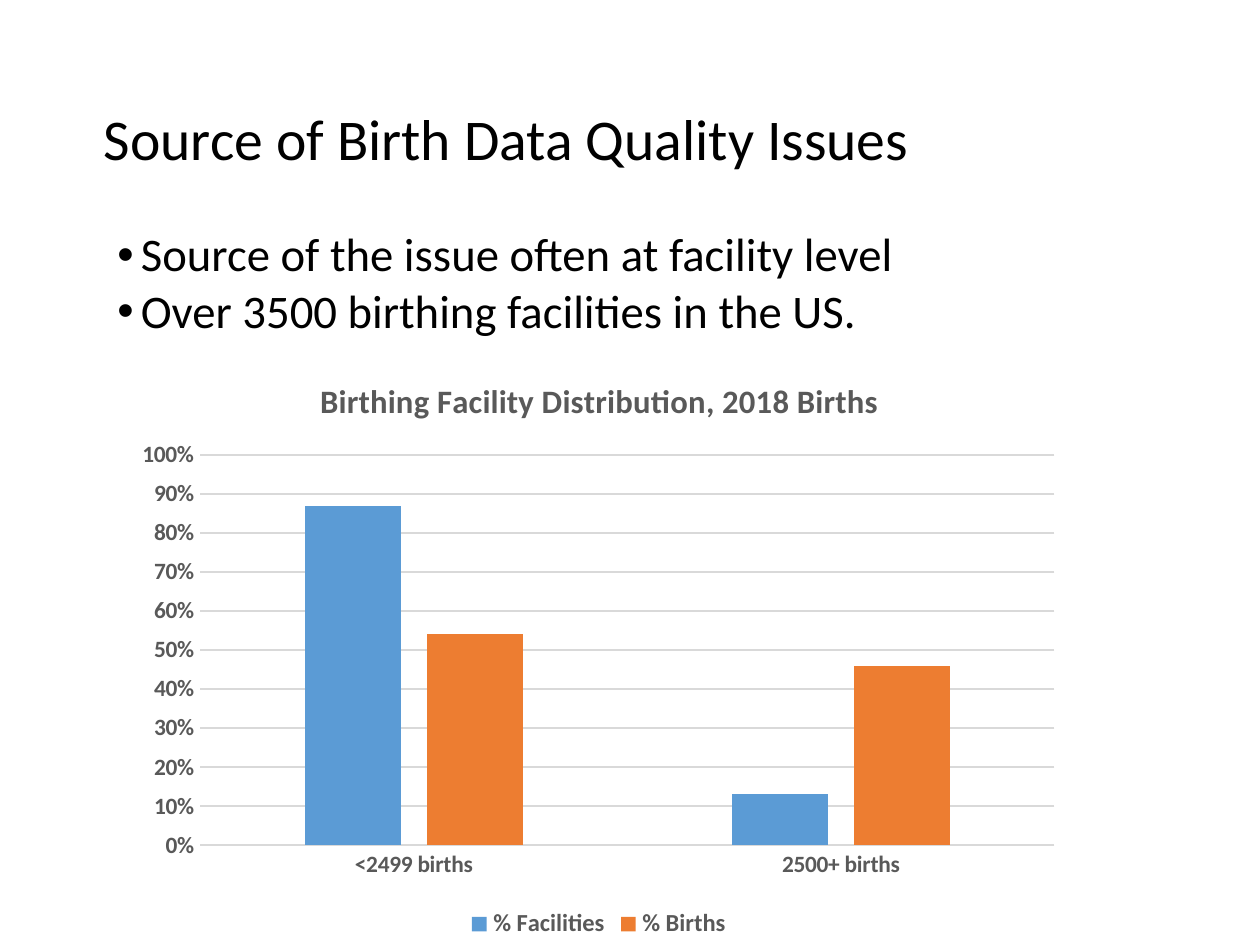
import pptx
import pptx.chart.data
import pptx.dml.color
import pptx.enum.chart
import pptx.enum.text
import pptx.oxml
import pptx.oxml.ns
import pptx.util
from pptx.util import Inches

FONT = "Calibri"
BLACK, GREY, GRID = "000000", "595959", "D9D9D9"
BLUE, ORANGE = "5B9BD5", "ED7D31"
SLIDE_WIDTH = 7.5
SLIDE_HEIGHT = SLIDE_WIDTH * 3 / 4


def color(value):
    return pptx.dml.color.RGBColor.from_string(value)


def apply_format(target, values):
    for name, value in values.items():
        setattr(target, name, value)


def set_layout(parent, index, **position):
    """Place a chart part by fractions of the chart's size."""
    for old in parent.findall(pptx.oxml.ns.qn("c:layout")):
        parent.remove(old)
    target = '<c:layoutTarget val="inner"/>' if "w" in position else ""
    modes = "".join(f'<c:{name}Mode val="edge"/>' for name in "xy")
    sizes = "".join(f'<c:{name} val="{value}"/>' for name, value in position.items())
    parent.insert(index, pptx.oxml.parse_xml(
        f'<c:layout {pptx.oxml.ns.nsdecls("c")}><c:manualLayout>'
        f"{target}{modes}{sizes}</c:manualLayout></c:layout>"))


class SlideBuilder:
    def __init__(self, presentation):
        self.slide = presentation.slides.add_slide(presentation.slide_layouts[6])

    def style_font(self, font, size, value=BLACK, bold=False):
        apply_format(font, {"name": FONT, "size": pptx.util.Pt(size), "bold": bold})
        font.color.rgb = color(value)

    def add_text(self, box, lines, size, anchor, bulleted=False):
        frame = self.slide.shapes.add_textbox(*map(Inches, box)).text_frame
        apply_format(frame, {"word_wrap": True, "vertical_anchor": anchor})
        for number, line in enumerate(lines):
            paragraph = frame.add_paragraph() if number else frame.paragraphs[0]
            paragraph.line_spacing = 0.9
            run = paragraph.add_run()
            run.text = line
            self.style_font(run.font, size)
            if bulleted:
                self.add_bullet(paragraph)

    def add_bullet(self, paragraph):
        paragraph.space_before = pptx.util.Pt(2.8)
        properties = paragraph._p.get_or_add_pPr()
        properties.set("marL", str(Inches(0.42)))
        properties.set("indent", str(Inches(-0.14)))
        namespace = pptx.oxml.ns.nsdecls("a")
        for xml in (f'<a:buFont {namespace} typeface="Arial"/>',
                    f'<a:buChar {namespace} char="•"/>'):
            properties.append(pptx.oxml.parse_xml(xml))

    def add_column_chart(self, box, title, categories, series):
        data = pptx.chart.data.CategoryChartData(number_format="0%")
        data.categories = categories
        for name, values, _ in series:
            data.add_series(name, values)
        chart = self.slide.shapes.add_chart(
            pptx.enum.chart.XL_CHART_TYPE.COLUMN_CLUSTERED,
            *map(Inches, box), data).chart
        self.style_font(chart.font, 10)
        plot = chart.plots[0]
        apply_format(plot, {"gap_width": 219, "overlap": -27, "vary_by_categories": False})
        for column, (_, _, fill) in zip(plot.series, series):
            column.format.fill.solid()
            column.format.fill.fore_color.rgb = color(fill)
        self.style_title(chart, title)
        self.style_axes(chart)
        self.style_legend(chart)
        set_layout(chart.element.chart.plotArea, 0, x=0.08, y=0.17, w=0.9, h=0.66)

    def style_title(self, chart, title):
        chart.has_title = True
        chart.chart_title.include_in_layout = False
        paragraph = chart.chart_title.text_frame.paragraphs[0]
        run = paragraph.add_run()
        run.text = title
        self.style_font(run.font, 14, GREY, True)
        set_layout(chart.chart_title.element, 1, x=0.2, y=0.03)

    def style_axes(self, chart):
        for axis in (chart.category_axis, chart.value_axis):
            axis.major_tick_mark = pptx.enum.chart.XL_TICK_MARK.NONE
            self.style_font(axis.tick_labels.font, 10, GREY, True)
        values = chart.value_axis
        apply_format(values, {"minimum_scale": 0, "maximum_scale": 1, "major_unit": 0.1,
                              "has_major_gridlines": True})
        apply_format(values.tick_labels, {"number_format": "0%",
                                          "number_format_is_linked": False})
        values.format.line.fill.background()
        for line in (chart.category_axis.format.line, values.major_gridlines.format.line):
            line.color.rgb = color(GRID)
            line.width = pptx.util.Pt(0.75)

    def style_legend(self, chart):
        chart.has_legend = True
        apply_format(chart.legend, {
            "position": pptx.enum.chart.XL_LEGEND_POSITION.BOTTOM,
            "include_in_layout": False})
        self.style_font(chart.legend.font, 10.5, GREY, True)


def main():
    presentation = pptx.Presentation()
    apply_format(presentation, {"slide_width": Inches(SLIDE_WIDTH),
                                "slide_height": Inches(SLIDE_HEIGHT)})
    builder = SlideBuilder(presentation)
    anchors = pptx.enum.text.MSO_ANCHOR
    builder.add_text((0.52, 0.3, 6.47, 1.09), ["Source of Birth Data Quality Issues"],
                     24.75, anchors.MIDDLE)
    builder.add_text((0.32, 1.33, 6.86, 4.14),
                     ["Source of the issue often at facility level",
                      "Over 3500 birthing facilities in the US."],
                     20, anchors.TOP, bulleted=True)
    builder.add_column_chart(
        (0.74, 2.11, 5.65, 3.52), "Birthing Facility Distribution, 2018 Births",
        ["<2499 births", "2500+ births"],
        [("% Facilities", (0.87, 0.13), BLUE), ("% Births", (0.54, 0.46), ORANGE)])
    presentation.save("out.pptx")


if __name__ == "__main__":
    main()
